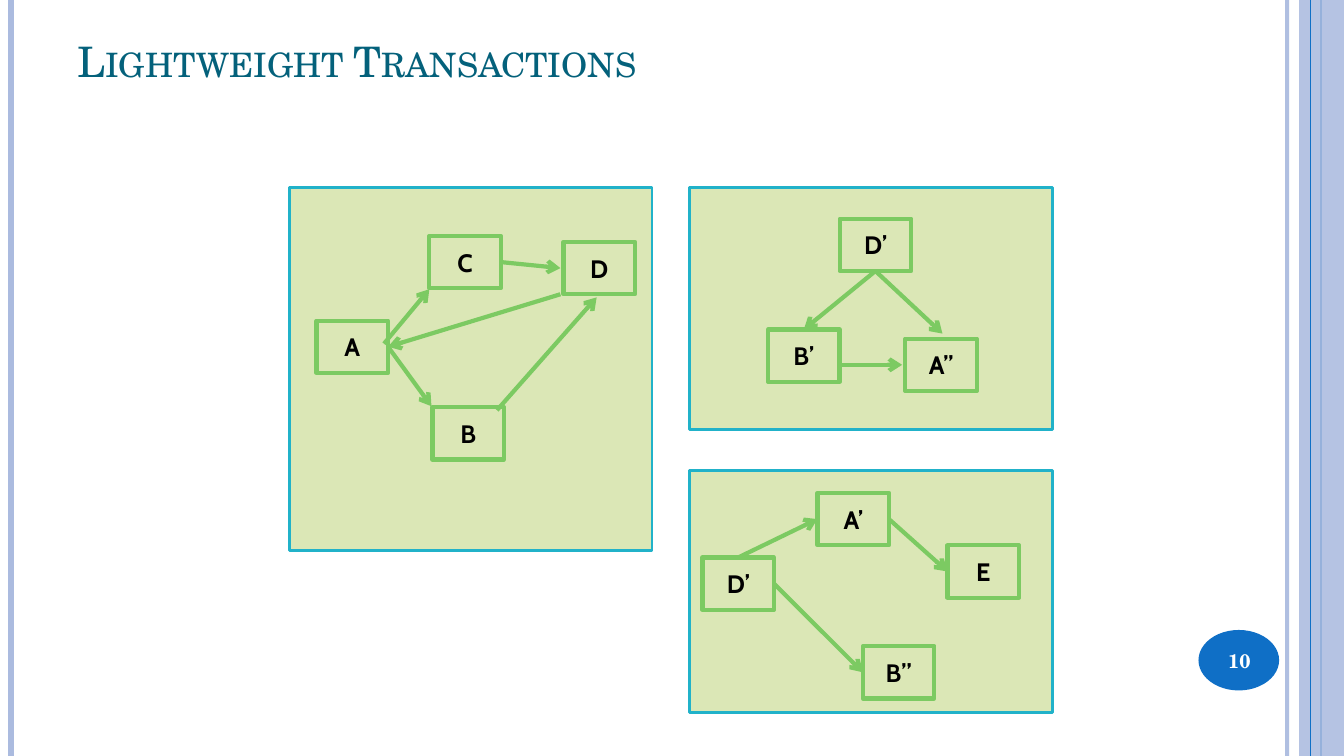
import dataclasses
import typing

import lxml.etree
import pptx
import pptx.dml.color
import pptx.enum.shapes
import pptx.enum.text
import pptx.oxml.ns
import pptx.util

Pt = pptx.util.Pt
SHAPE = pptx.enum.shapes.MSO_SHAPE
ANCHOR = pptx.enum.text.MSO_ANCHOR
ALIGN = pptx.enum.text.PP_ALIGN
qn = pptx.oxml.ns.qn

TOP, LEFT, BOTTOM, RIGHT = range(4)
GREEN = "7CCA62"
BLUE = "0F6FC6"
LILAC = "ABBBDF"
SERIF = "TeX Gyre Schola"
NODE_W, NODE_H = 51.1, 37.4
SLIDE_W, SLIDE_H = 960, 540


@dataclasses.dataclass
class Stripe:
    x: float
    color: str
    width: float
    alpha: int = 100


@dataclasses.dataclass
class Box:
    x: float
    y: float
    w: float
    h: float


@dataclasses.dataclass
class Node:
    key: str
    text: str
    x: float
    y: float


class Site(typing.NamedTuple):
    key: str
    side: int


class Point(typing.NamedTuple):
    x: float
    y: float


@dataclasses.dataclass
class Arrow:
    start: Site | Point
    end: Site | Point


STRIPES = [Stripe(919.4, LILAC, 3, 93), Stripe(7.9, LILAC, 4.5), Stripe(943.9, BLUE, 1.5)]
INNER_STRIPE = Stripe(936, BLUE, 0.75)

PANELS = [
    Box(492.5, 336.2, 259.2, 172.8),
    Box(492.5, 133.9, 259.2, 172.8),
    Box(206.6, 133.9, 259.2, 259.2),
]

NODES = [
    Node("A", "A", 226.1, 229),
    Node("B", "B", 308.9, 290.9),
    Node("C", "C", 306.7, 168.5),
    Node("D", "D", 402.5, 172.8),
    Node("upper D", "D’", 599.8, 156.2),
    Node("upper B", "B’", 548.6, 235.4),
    Node("upper A", "A’’", 646.6, 241.9),
    Node("lower D", "D’", 501.8, 398.2),
    Node("lower A", "A’", 583.9, 352.1),
    Node("lower B", "B”", 616.3, 461.5),
    Node("E", "E", 676.8, 389.5),
]

ARROWS = [
    Arrow(Point(274.3, 245.5), Point(306.7, 206.6)),
    Arrow(Site("A", RIGHT), Point(308.2, 290.2)),
    Arrow(Site("C", RIGHT), Point(400.3, 191.5)),
    Arrow(Point(355, 293), Point(426.2, 212.4)),
    Arrow(Point(400.3, 210.2), Site("A", RIGHT)),
    Arrow(Site("upper D", BOTTOM), Point(673.2, 238.3)),
    Arrow(Site("upper D", BOTTOM), Site("upper B", TOP)),
    Arrow(Point(599, 260.6), Point(644.4, 260.6)),
    Arrow(Site("lower D", TOP), Site("lower A", LEFT)),
    Arrow(Site("lower D", RIGHT), Site("lower B", LEFT)),
    Arrow(Site("lower A", RIGHT), Site("E", LEFT)),
]


def rgb(color: str) -> pptx.dml.color.RGBColor:
    return pptx.dml.color.RGBColor.from_string(color)


def set_alpha(sp, percent: int) -> None:
    clr = next(sp._element.spPr.iter(qn("a:srgbClr")))
    lxml.etree.SubElement(clr, qn("a:alpha")).set("val", str(percent * 1000))


def add_line(s, start: Point, end: Point, color: str, width: float):
    cn = s.shapes.add_connector(
        pptx.enum.shapes.MSO_CONNECTOR.STRAIGHT, Pt(start.x), Pt(start.y), Pt(end.x), Pt(end.y)
    )
    cn.line.color.rgb = rgb(color)
    cn.line.width = Pt(width)
    lxml.etree.SubElement(cn._element.spPr, qn("a:effectLst"))
    return cn


def add_stripe(s, stripe: Stripe) -> None:
    cn = add_line(s, Point(stripe.x, 0), Point(stripe.x, SLIDE_H), stripe.color, stripe.width)
    if stripe.alpha < 100:
        set_alpha(cn, stripe.alpha)


def add_box(s, kind, box: Box, fill: str | None = None, line: str | None = None, width: float = 0):
    sp = s.shapes.add_shape(kind, Pt(box.x), Pt(box.y), Pt(box.w), Pt(box.h))
    sp.shadow.inherit = False
    if fill:
        sp.fill.solid()
        sp.fill.fore_color.rgb = rgb(fill)
    else:
        sp.fill.background()
    if line:
        sp.line.color.rgb = rgb(line)
        sp.line.width = Pt(width)
    else:
        sp.line.fill.background()
    return sp


def set_text(sp, text: str, font: str, size: float, color: str, bold: bool, align, anchor):
    tf = sp.text_frame
    tf.word_wrap = True
    tf.vertical_anchor = anchor
    tf.text = text
    p = tf.paragraphs[0]
    p.alignment = align
    r = p.runs[0]
    r.font.name = font
    r.font.size = Pt(size)
    r.font.bold = bold
    r.font.color.rgb = rgb(color)
    return r


def add_text_box(s, box: Box):
    return s.shapes.add_textbox(Pt(box.x), Pt(box.y), Pt(box.w), Pt(box.h))


def add_node(s, node: Node):
    sp = add_box(s, SHAPE.RECTANGLE, Box(node.x, node.y, NODE_W, NODE_H), line=GREEN, width=3)
    set_text(sp, node.text, "Cabin", 18, "000000", True, ALIGN.CENTER, ANCHOR.MIDDLE)
    return sp


def add_arrow(s, arrow: Arrow, nodes: dict) -> None:
    start, end = (e if isinstance(e, Point) else Point(0, 0) for e in (arrow.start, arrow.end))
    cn = add_line(s, start, end, GREEN, 3)
    if isinstance(arrow.start, Site):
        cn.begin_connect(nodes[arrow.start.key], arrow.start.side)
    if isinstance(arrow.end, Site):
        cn.end_connect(nodes[arrow.end.key], arrow.end.side)
    ln = cn._element.spPr.find(qn("a:ln"))
    lxml.etree.SubElement(ln, qn("a:tailEnd")).set("type", "arrow")


def main() -> None:
    prs = pptx.Presentation()
    prs.slide_width, prs.slide_height = Pt(SLIDE_W), Pt(SLIDE_H)
    s = prs.slides.add_slide(prs.slide_layouts[6])

    for stripe in STRIPES:
        add_stripe(s, stripe)
    band = add_box(s, SHAPE.RECTANGLE, Box(928, 0, 32, SLIDE_H), LILAC)
    set_alpha(band, 87)
    add_stripe(s, INNER_STRIPE)
    add_box(s, SHAPE.OVAL, Box(856.1, 450, 57.6, 43.2), BLUE)

    for panel in PANELS:
        add_box(s, SHAPE.RECTANGLE, panel, "DBE7B6", "21B2C9", 2)

    title = add_text_box(s, Box(48.2, 21.6, 784, 90))
    r = set_text(
        title, "Lightweight Transactions", SERIF, 30, "04617B", False, ALIGN.LEFT, ANCHOR.TOP
    )
    r.font._element.set("cap", "small")

    nodes = {node.key: add_node(s, node) for node in NODES}
    for arrow in ARROWS:
        add_arrow(s, arrow, nodes)

    number = add_text_box(s, Box(853.2, 451.4, 64.1, 41))
    set_text(number, "10", SERIF, 14, "FFFFFF", True, ALIGN.CENTER, ANCHOR.MIDDLE)

    prs.save("out.pptx")


if __name__ == "__main__":
    main()
